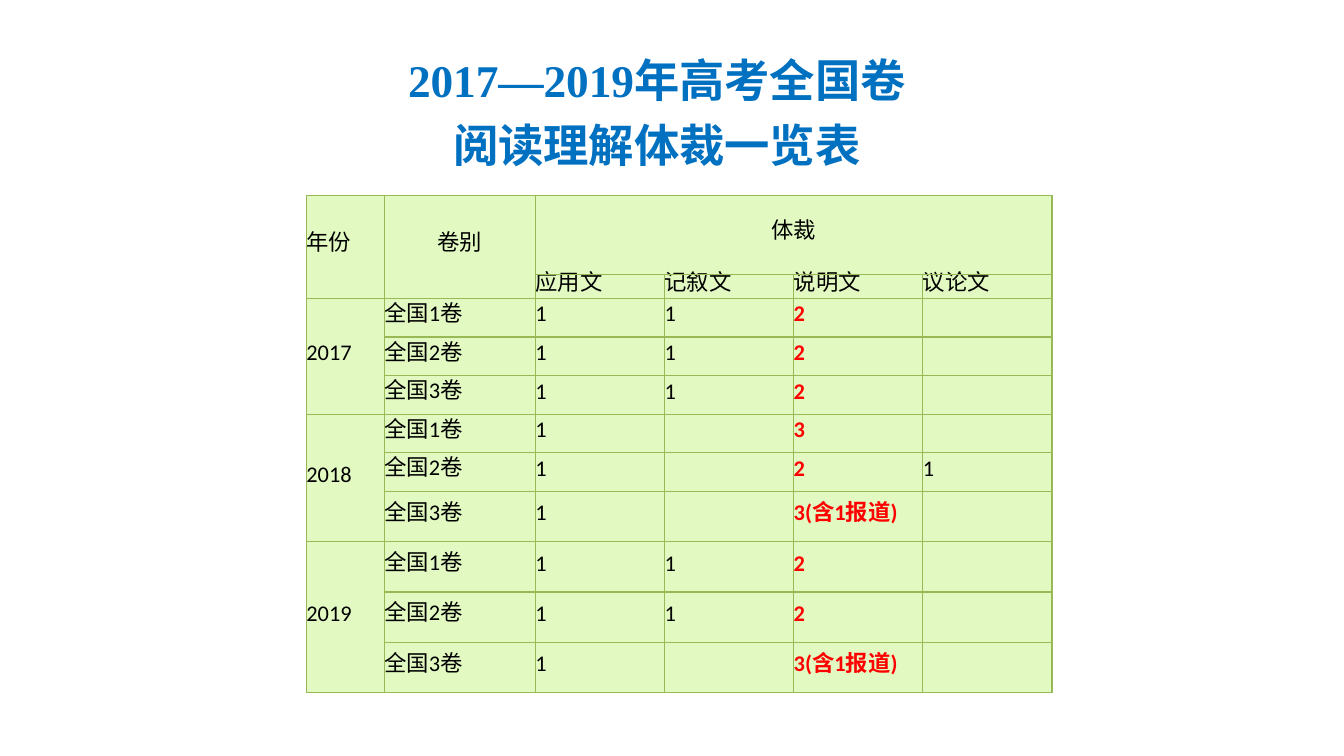
from lxml import etree
from pptx import Presentation
from pptx.dml.color import RGBColor
from pptx.enum.text import MSO_ANCHOR, MSO_AUTO_SIZE, PP_ALIGN
from pptx.oxml import parse_xml
from pptx.oxml.ns import nsdecls, qn
from pptx.util import Cm, Pt

COLUMN_WIDTHS = [1.47, 2.86] + [2.44] * 4
ROW_HEIGHTS = [1.5, 0.45] + [0.73] * 5 + [0.95] * 4
GENRES = ["应用文", "记叙文", "说明文", "议论文"]
EXPOSITORY_COLUMN = 2 + GENRES.index("说明文")
NOTED = "3(含1报道)"
COUNTS = {
    "2017": [["1", "1", "2", ""]] * 3,
    "2018": [["1", "", "3", ""], ["1", "", "2", "1"], ["1", "", NOTED, ""]],
    "2019": [["1", "1", "2", ""]] * 2 + [["1", "", NOTED, ""]],
}


def color(hex_string):
    return RGBColor.from_string(hex_string)


def add_title(page, left, top, width, height):
    title = page.shapes.title
    title.left, title.top, title.width, title.height = map(Cm, (left, top, width, height))
    frame = title.text_frame
    frame.word_wrap = True
    frame.auto_size = MSO_AUTO_SIZE.NONE
    frame.vertical_anchor = MSO_ANCHOR.MIDDLE
    frame.margin_bottom = Cm(1.38)
    para = frame.paragraphs[0]
    para.alignment = PP_ALIGN.CENTER
    para.line_spacing = 1.2
    para.font.size = Pt(24.3)
    para.font.bold = True
    para.font.color.rgb = color("0070C0")
    years = para.add_run()
    years.text = "2017—2019"
    years.font.name = "Times New Roman"
    for index, line in enumerate(["年高考全国卷", "阅读理解体裁一览表"]):
        if index:
            para.add_line_break()
        span = para.add_run()
        span.text = line
        span.font.name = "Calibri"


def set_borders(cell, hex_string, points):
    properties = cell._tc.get_or_add_tcPr()
    for index, side in enumerate(["lnL", "lnR", "lnT", "lnB"]):
        line = parse_xml(f'<a:{side} {nsdecls("a")} w="{Pt(points)}"/>')
        fill = etree.SubElement(line, qn("a:solidFill"))
        etree.SubElement(fill, qn("a:srgbClr"), val=hex_string)
        properties.insert(index, line)


def format_cell(cell, text, centered=False, highlighted=False):
    cell.text = text
    cell.vertical_anchor = MSO_ANCHOR.MIDDLE
    cell.margin_left = cell.margin_right = cell.margin_top = cell.margin_bottom = 0
    cell.fill.solid()
    cell.fill.fore_color.rgb = color("E2FAC2")
    set_borders(cell, "98B955", 0.75)
    para = cell.text_frame.paragraphs[0]
    para.alignment = PP_ALIGN.CENTER if centered else PP_ALIGN.LEFT
    para.line_spacing = Pt(11)
    para.space_after = Pt(10)
    para.font.name = "Calibri"
    para.font.size = Pt(12)
    para.font.bold = highlighted
    para.font.color.rgb = color("FF0000" if highlighted else "000000")


def genre_rows():
    """Text of every row; cells covered by a merge are empty."""
    rows = [["年份", "卷别", "体裁", "", "", ""], ["", ""] + GENRES]
    for year, papers in COUNTS.items():
        for number, counts in enumerate(papers, 1):
            rows.append([year if number == 1 else "", f"全国{number}卷"] + counts)
    return rows


def add_genre_table(page, left, top):
    rows = genre_rows()
    table = page.shapes.add_table(
        len(rows), len(COLUMN_WIDTHS), Cm(left), Cm(top),
        Cm(sum(COLUMN_WIDTHS)), Cm(sum(ROW_HEIGHTS))).table
    for column, width in zip(table.columns, COLUMN_WIDTHS):
        column.width = Cm(width)
    for row, height in zip(table.rows, ROW_HEIGHTS):
        row.height = Cm(height)
    for r, texts in enumerate(rows):
        for c, text in enumerate(texts):
            format_cell(table.cell(r, c), text,
                        centered=r == 0 and c > 0,
                        highlighted=r > 1 and c == EXPOSITORY_COLUMN)
    for c in (0, 1):
        table.cell(0, c).merge(table.cell(1, c))
    table.cell(0, 2).merge(table.cell(0, len(COLUMN_WIDTHS) - 1))
    for r in range(2, len(rows), 3):
        table.cell(r, 0).merge(table.cell(r + 2, 0))


def main():
    deck = Presentation()
    deck.slide_width, deck.slide_height = Cm(25.4), Cm(14.29)
    page = deck.slides.add_slide(deck.slide_layouts[5])
    add_title(page, 3.84, 1.45, 17.15, 2.39)
    add_genre_table(page, 5.79, 3.69)
    deck.save("out.pptx")


if __name__ == "__main__":
    main()
